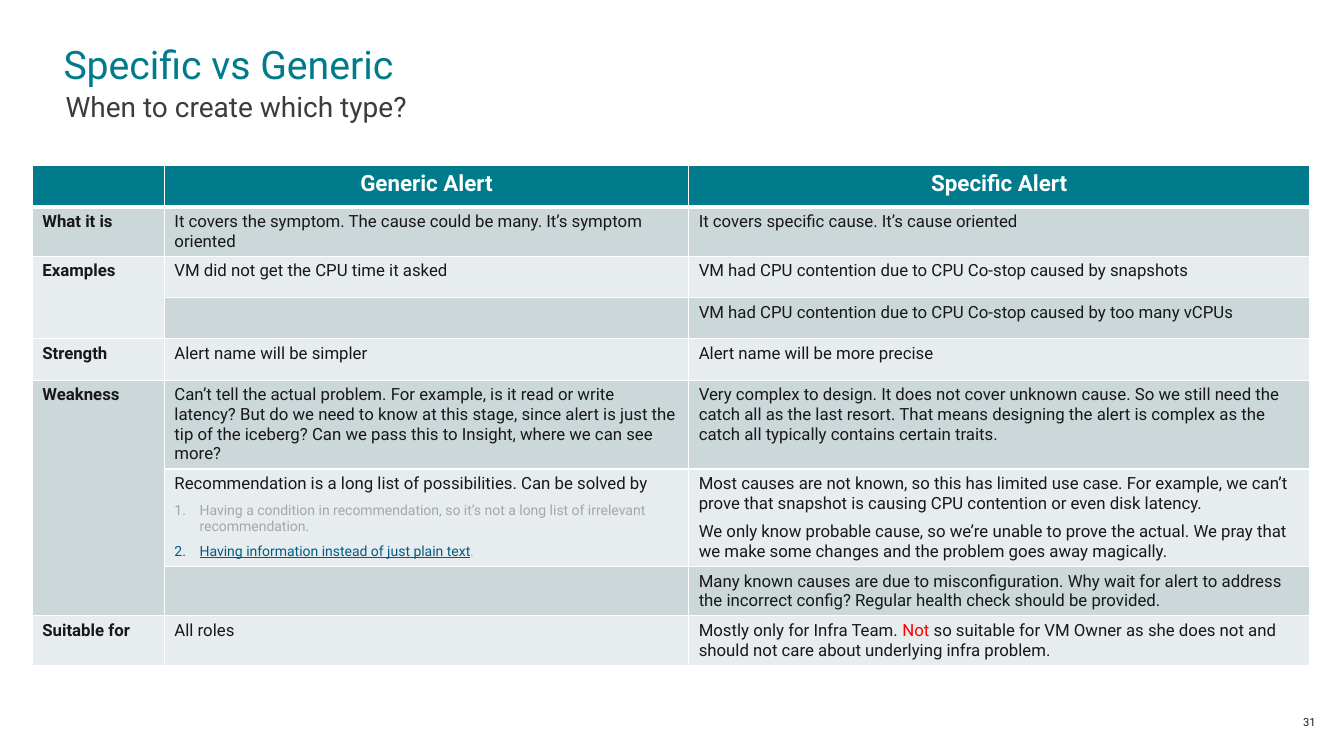
"""Builds the slide that compares generic alerts with specific alerts."""
from dataclasses import dataclass

from lxml.etree import SubElement
from pptx import Presentation
from pptx.dml.color import RGBColor
from pptx.enum.text import MSO_ANCHOR as Anchor, PP_ALIGN as Align
from pptx.oxml import parse_xml
from pptx.oxml.ns import nsdecls, qn
from pptx.util import Inches, Length, Pt

WIDTH, HEIGHT = Inches(13.33), Inches(7.5)
FONT = "Roboto"
TEAL, INK, WHITE, GREY, LINK, RED = "007B8C", "181818", "FFFFFF", "A6A6A6", "005B83", "FF0000"
BANDS = ("CCD7DA", "E7ECEE")
TABLE_LEFT, TABLE_TOP = 2.4, 21.87
COLUMN_SHARES = (9.83, 39.01, 46.21)
ROW_SHARE = 5.47


@dataclass(frozen=True)
class Span:
    text: str
    color: str = INK
    underline: bool = False


@dataclass(frozen=True)
class Para:
    spans: tuple[Span, ...]
    size: float = 12
    bold: bool = False
    align: Align = Align.LEFT
    spacing: float | None = None
    numbered: bool = False


@dataclass(frozen=True)
class Label:
    left: float
    top: float
    width: float
    height: float
    para: Para
    anchor: Anchor = Anchor.TOP
    wrap: bool = True


def body(text: str) -> Para:
    return Para((Span(text),))


def topic(text: str) -> Para:
    return Para((Span(text),), bold=True)


def heading(text: str) -> Para:
    return Para((Span(text, WHITE),), size=16, bold=True, align=Align.CENTER)


def step(*spans: Span) -> Para:
    return Para(spans, size=10, numbered=True)


LABELS = (
    Label(94.3, 94.27, 3.6, 2.67, Para((Span("31", "1B1E35"),), 8, align=Align.RIGHT, spacing=0.9),
          Anchor.MIDDLE, False),
    Label(4.88, 11.87, 90.17, 3.6, Para((Span("When to create which type?", "3C3C3C"),), 20)),
    Label(4.73, 6, 90.17, 5.6, Para((Span("Specific vs Generic", TEAL),), 28, spacing=0.9),
          Anchor.BOTTOM, False),
)

ROWS: tuple[tuple[list[Para], list[Para], list[Para]], ...] = (
    ([], [heading("Generic Alert")], [heading("Specific Alert")]),
    ([topic("What it is")],
     [body("It covers the symptom. The cause could be many. It’s symptom oriented")],
     [body("It covers specific cause. It’s cause oriented")]),
    ([topic("Examples")],
     [body("VM did not get the CPU time it asked")],
     [body("VM had CPU contention due to CPU Co-stop caused by snapshots")]),
    ([], [], [body("VM had CPU contention due to CPU Co-stop caused by too many vCPUs")]),
    ([topic("Strength")],
     [body("Alert name will be simpler")],
     [body("Alert name will be more precise")]),
    ([topic("Weakness")],
     [body("Can’t tell the actual problem. For example, is it read or write latency? But do we need to "
           "know at this stage, since alert is just the tip of the iceberg? Can we pass this to "
           "Insight, where we can see more?")],
     [body("Very complex to design. It does not cover unknown cause. So we still need the catch all as "
           "the last resort. That means designing the alert is complex as the catch all typically "
           "contains certain traits.")]),
    ([],
     [body("Recommendation is a long list of possibilities. Can be solved by"),
      step(Span("Having a condition in recommendation, so it’s not a long list of irrelevant "
                "recommendation.", GREY)),
      step(Span("Having information instead of just plain text", LINK, True), Span(".", GREY))],
     [body("Most causes are not known, so this has limited use case. For example, we can’t prove that "
           "snapshot is causing CPU contention or even disk latency."),
      body("We only know probable cause, so we’re unable to prove the actual. We pray that we make some "
           "changes and the problem goes away magically.")]),
    ([], [],
     [body("Many known causes are due to misconfiguration. Why wait for alert to address the incorrect "
           "config? Regular health check should be provided.")]),
    ([topic("Suitable for")],
     [body("All roles")],
     [Para((Span("Mostly only for Infra Team. "), Span("Not", RED),
            Span(" so suitable for VM Owner as she does not and should not care about underlying infra "
                 "problem.")))]),
)
TOPIC_MERGES = ((2, 3), (5, 7))


def across(share: float) -> Length:
    return Length(round(WIDTH * share / 100))


def down(share: float) -> Length:
    return Length(round(HEIGHT * share / 100))


def rgb(color: str) -> RGBColor:
    return RGBColor.from_string(color)


def write(frame, paras: list[Para]) -> None:
    for index, para in enumerate(paras):
        paragraph = frame.add_paragraph() if index else frame.paragraphs[0]
        paragraph.alignment = para.align
        if index:
            paragraph.space_before = Pt(6)
        if para.spacing:
            paragraph.line_spacing = para.spacing
        if para.numbered:
            properties = paragraph._p.get_or_add_pPr()
            properties.set("marL", str(Inches(0.25)))
            properties.set("indent", str(-Inches(0.25)))
            SubElement(properties, qn("a:buAutoNum"), type="arabicPeriod")
        paragraph.font.name = FONT
        paragraph.font.size = Pt(para.size)
        paragraph.font.bold = para.bold
        uniform = len(para.spans) == 1
        for span in para.spans:
            run = paragraph.add_run()
            run.text = span.text
            font = paragraph.font if uniform else run.font
            font.color.rgb = rgb(span.color)
            font.underline = span.underline


def add_label(slide, label: Label) -> None:
    box = slide.shapes.add_textbox(across(label.left), down(label.top),
                                   across(label.width), down(label.height))
    frame = box.text_frame
    frame.margin_left = frame.margin_top = frame.margin_right = frame.margin_bottom = 0
    frame.word_wrap = label.wrap
    frame.vertical_anchor = label.anchor
    write(frame, [label.para])


def style_cell(cell, row: int) -> None:
    cell.fill.solid()
    cell.fill.fore_color.rgb = rgb(BANDS[(row - 1) % 2] if row else TEAL)
    heavy_side = {0: "B", 1: "T"}.get(row)
    properties = cell._tc.get_or_add_tcPr()
    for position, side in enumerate("LRTB"):
        width = Pt(3 if side == heavy_side else 1)
        properties.insert(position, parse_xml(
            f'<a:ln{side} {nsdecls("a")} w="{width}"><a:solidFill><a:srgbClr val="{WHITE}"/>'
            f'</a:solidFill></a:ln{side}>'))


def add_comparison(slide) -> None:
    table = slide.shapes.add_table(
        len(ROWS), len(COLUMN_SHARES), across(TABLE_LEFT), down(TABLE_TOP),
        across(sum(COLUMN_SHARES)), down(ROW_SHARE * len(ROWS))).table
    table.horz_banding = False
    for column, share in zip(table.columns, COLUMN_SHARES):
        column.width = across(share)
    for row, contents in enumerate(ROWS):
        for column, paras in enumerate(contents):
            cell = table.cell(row, column)
            style_cell(cell, row)
            write(cell.text_frame, paras)
    for first, last in TOPIC_MERGES:
        table.cell(first, 0).merge(table.cell(last, 0))


def main() -> None:
    deck = Presentation()
    deck.slide_width, deck.slide_height = WIDTH, HEIGHT
    slide = deck.slides.add_slide(deck.slide_layouts[6])
    add_comparison(slide)
    for label in LABELS:
        add_label(slide, label)
    deck.save("out.pptx")


if __name__ == "__main__":
    main()
